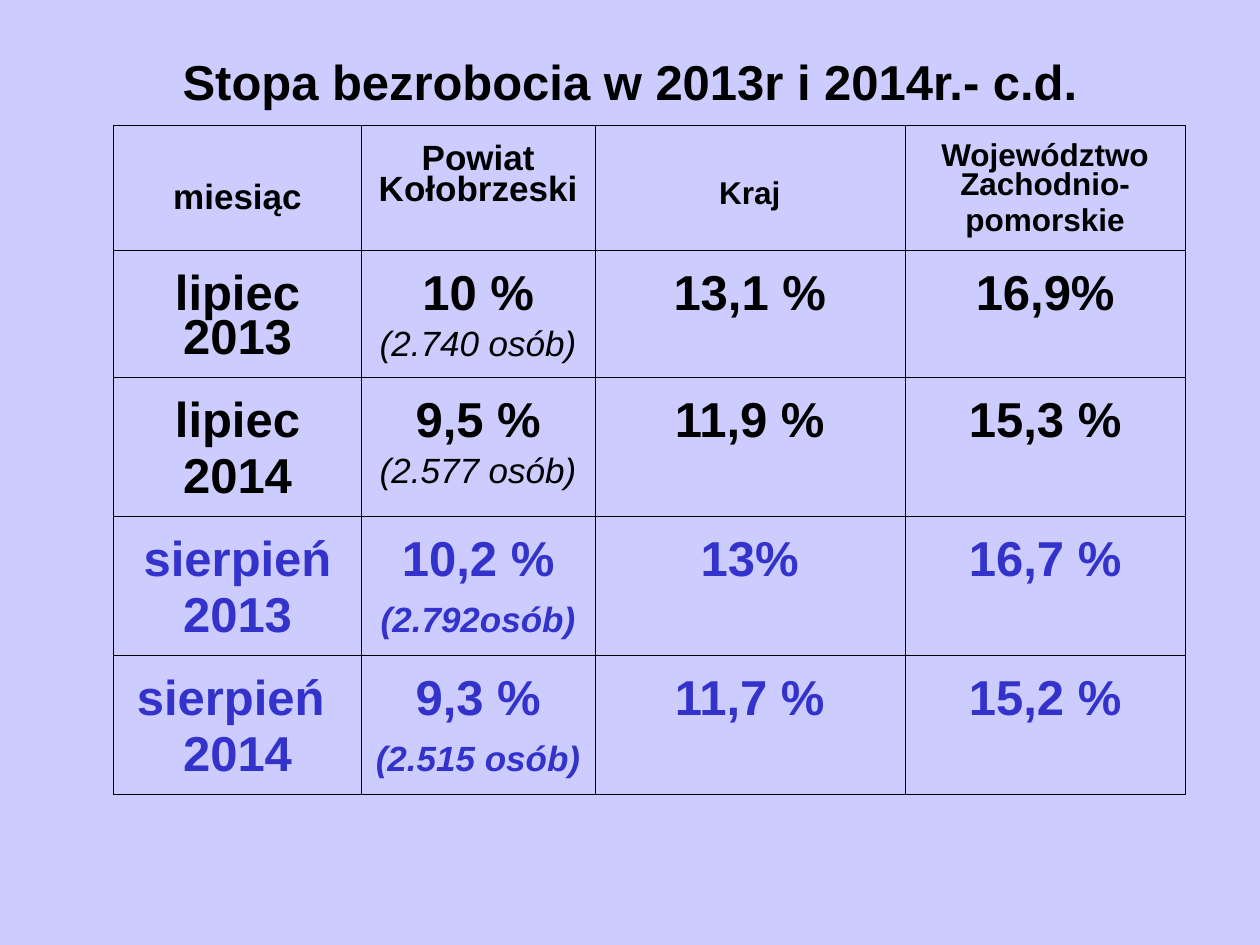
import pptx
import pptx.dml.color
import pptx.enum.text
import pptx.oxml
import pptx.oxml.ns
import pptx.util
from pptx.util import Inches

COLORS = {"background": "CCCCFF", "text": "000000", "august": "3333CC", "border": "000000"}
FONT = "Arial"
INNER_BORDER, OUTER_BORDER = 0.11, 0.23

COLUMN_WIDTHS = [1.97, 1.85, 2.46, 2.23]
ROW_HEIGHTS = [0.94, 0.95, 1.06, 1.05, 1.05]

# Header cells: lines, size, top inset, space before
HEADERS = [
    (["miesiąc"], 20, 0.47, 4.5),
    (["Powiat Kołobrzeski"], 20, 0.16, 5),
    (["Kraj"], 18, 0.45, 4.5),
    (["Województwo Zachodnio-", "pomorskie"], 18, 0.15, 4.5),
]

# Month lines, county rate, number of people, country rate, voivodeship rate, colour
MONTHS = [
    (["lipiec 2013"], "10 %", "(2.740 osób)", "13,1 %", "16,9%", "text"),
    (["lipiec", "2014"], "9,5 %", "(2.577 osób)", "11,9 %", "15,3 %", "text"),
    (["sierpień", "2013"], "10,2 %", "(2.792osób)", "13%", "16,7 %", "august"),
    (["sierpień ", "2014"], "9,3 %", "(2.515 osób)", "11,7 %", "15,2 %", "august"),
]


def rgb(name):
    return pptx.dml.color.RGBColor.from_string(COLORS[name])


def format_run(run, size, color="text", bold=True, italic=False):
    font = run.font
    font.name = FONT
    font.size = pptx.util.Pt(size)
    font.bold = bold
    font.italic = italic
    font.color.rgb = rgb(color)


def set_borders(cell, widths):
    """Draw the left, right, top and bottom border in the given point widths."""
    properties = cell._tc.get_or_add_tcPr()
    for index, (side, width) in enumerate(zip("LRTB", widths)):
        line = pptx.oxml.parse_xml(
            f'<a:ln{side} {pptx.oxml.ns.nsdecls("a")} w="{pptx.util.Pt(width)}">'
            f'<a:solidFill><a:srgbClr val="{COLORS["border"]}"/></a:solidFill>'
            f'<a:prstDash val="solid"/></a:ln{side}>'
        )
        properties.insert(index, line)


def fill_cell(cell, lines, size, top, space_before, color="text"):
    cell.fill.background()
    cell.margin_left = cell.margin_right = Inches(0.1)
    cell.margin_top = Inches(top)
    cell.margin_bottom = Inches(0.05)
    cell.text_frame.text = "\n".join(lines)
    for paragraph in cell.text_frame.paragraphs:
        paragraph.alignment = pptx.enum.text.PP_ALIGN.CENTER
        paragraph.line_spacing = 0.81
        paragraph.space_before = pptx.util.Pt(space_before)
        format_run(paragraph.runs[0], size, color)


def add_title(slide, left, top, width, height):
    text_box = slide.shapes.add_textbox(left, top, width, height)
    text_frame = text_box.text_frame
    text_frame.word_wrap = True
    text_frame.vertical_anchor = pptx.enum.text.MSO_ANCHOR.MIDDLE
    text_frame.text = "Stopa bezrobocia w 2013r i 2014r.- c.d."
    paragraph = text_frame.paragraphs[0]
    paragraph.alignment = pptx.enum.text.PP_ALIGN.CENTER
    format_run(paragraph.runs[0], 28)


def add_rate_table(slide, left, top, width, height):
    row_count, column_count = len(ROW_HEIGHTS), len(COLUMN_WIDTHS)
    table = slide.shapes.add_table(row_count, column_count, left, top, width, height).table
    table.first_row = table.horz_banding = False
    for column, share in zip(table.columns, COLUMN_WIDTHS):
        column.width = int(width * share / sum(COLUMN_WIDTHS))
    for row, share in zip(table.rows, ROW_HEIGHTS):
        row.height = int(height * share / sum(ROW_HEIGHTS))

    # Header row
    for column, header in enumerate(HEADERS):
        fill_cell(table.cell(0, column), *header)

    # One row for each month
    for row, (month, county, people, country, voivodeship, color) in enumerate(MONTHS, 1):
        for column, lines in enumerate([month, [county, people], [country], [voivodeship]]):
            fill_cell(table.cell(row, column), lines, 28, 0.2, 7, color)
        paragraph = table.cell(row, 1).text_frame.paragraphs[1]
        is_august = color == "august"
        format_run(paragraph.runs[0], 20, color, bold=is_august, italic=True)
        if is_august:
            space = paragraph.add_run()
            space.text = " "
            format_run(space, 28, color)

    # Thicker lines on the outside
    for row in range(row_count):
        for column in range(column_count):
            outer = (column == 0, column == column_count - 1, row == 0, row == row_count - 1)
            widths = [OUTER_BORDER if edge else INNER_BORDER for edge in outer]
            set_borders(table.cell(row, column), widths)


def main():
    presentation = pptx.Presentation()
    presentation.slide_width = Inches(10)
    presentation.slide_height = Inches(7.5)
    slide = presentation.slides.add_slide(presentation.slide_layouts[6])
    slide.background.fill.solid()
    slide.background.fill.fore_color.rgb = rgb("background")
    add_title(slide, Inches(0.5), Inches(0.3), Inches(9), Inches(0.69))
    add_rate_table(slide, Inches(0.9), Inches(0.99),
                   Inches(sum(COLUMN_WIDTHS)), Inches(sum(ROW_HEIGHTS)))
    presentation.save("out.pptx")


if __name__ == "__main__":
    main()
